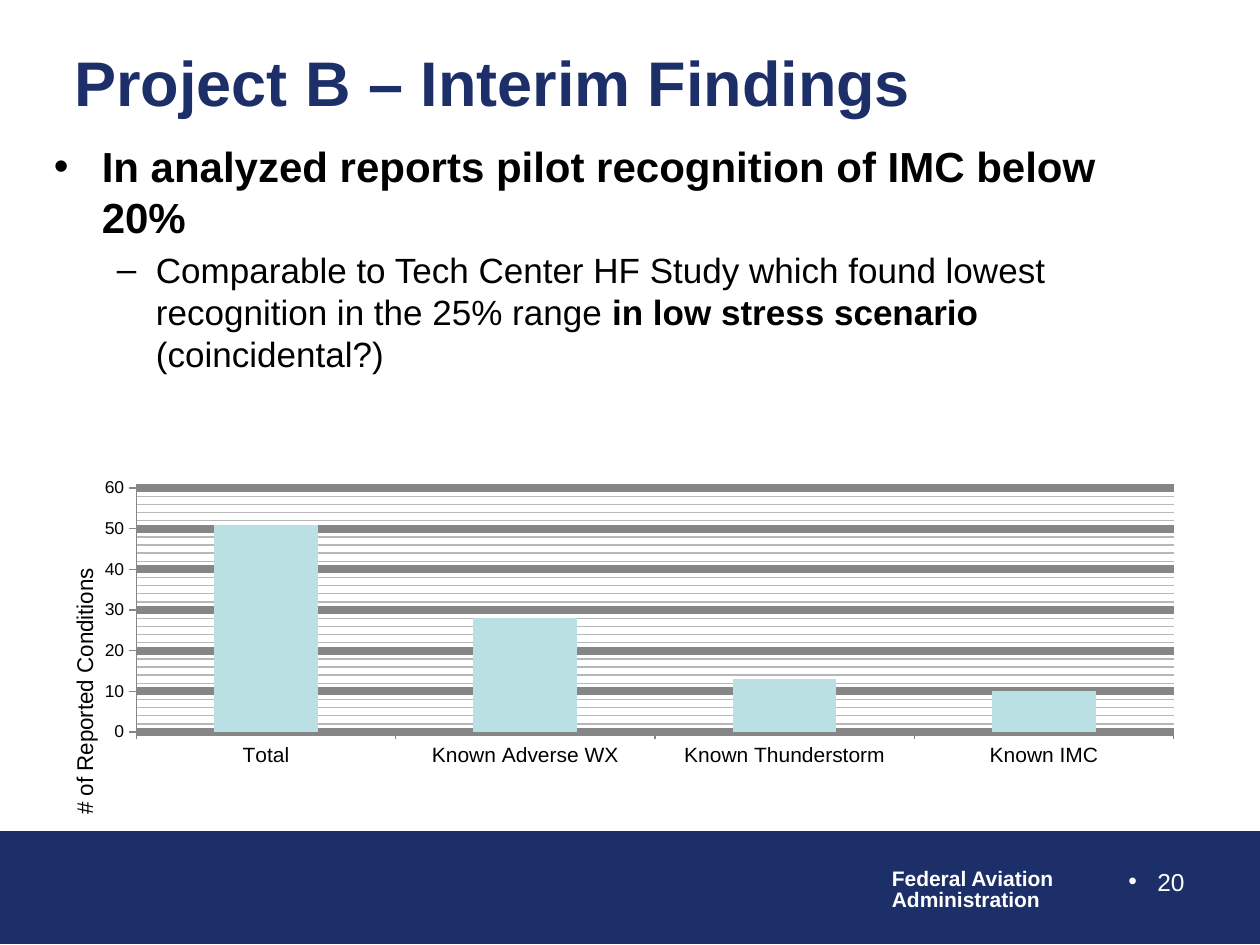
"""Build the Project B interim findings slide with a column chart."""
from lxml.etree import SubElement
from pptx import Presentation
from pptx.chart.data import CategoryChartData
from pptx.dml.color import RGBColor
from pptx.enum.chart import XL_CHART_TYPE, XL_TICK_MARK
from pptx.enum.shapes import MSO_SHAPE
from pptx.enum.text import MSO_ANCHOR, PP_ALIGN
from pptx.oxml.ns import qn
from pptx.util import Inches, Pt

NAVY, WHITE, BLACK = "1D2F68", "FFFFFF", "000000"


def style(font, size, color, bold=False):
    """Apply Arial with the given size, colour and weight."""
    font.name = "Arial"
    font.size = Pt(size)
    font.bold = bold
    font.color.rgb = RGBColor.from_string(color)


def set_layout(parent, position, **values):
    """Place a chart part by fractions of the chart area."""
    for old_layout in parent.findall(qn("c:layout")):
        parent.remove(old_layout)
    layout = SubElement(parent, qn("c:layout"))
    parent.insert(position, layout)
    manual = SubElement(layout, qn("c:manualLayout"))
    for name, value in values.items():
        SubElement(manual, qn(f"c:{name}")).set("val", str(value))


presentation = Presentation()
presentation.slide_width = Inches(10)
presentation.slide_height = Inches(7.5)
slide = presentation.slides.add_slide(presentation.slide_layouts[5])

footer = slide.shapes.add_shape(
    MSO_SHAPE.RECTANGLE, Inches(0), Inches(6.6), Inches(10), Inches(0.89))
footer.shadow.inherit = False
footer.fill.solid()
footer.fill.fore_color.rgb = RGBColor.from_string(NAVY)
footer.line.color.rgb = RGBColor.from_string(NAVY)
footer.line.width = Pt(0.75)

agency = slide.shapes.add_textbox(Inches(6.98), Inches(6.85), Inches(1.5), Inches(0.44))
agency.text_frame.text = "Federal Aviation\nAdministration"
for paragraph in agency.text_frame.paragraphs:
    paragraph.line_spacing = 0.85
    style(paragraph.font, 12, WHITE, True)

title = slide.shapes.title
title.left, title.top = Inches(0.49), Inches(0.31)
title.width, title.height = Inches(9.27), Inches(0.67)
title.text_frame.text = "Project B – Interim Findings"
title.text_frame.vertical_anchor = MSO_ANCHOR.MIDDLE
title.text_frame.paragraphs[0].alignment = PP_ALIGN.LEFT
style(title.text_frame.paragraphs[0].font, 36, NAVY, True)

body = slide.shapes.add_textbox(Inches(0.33), Inches(1.07), Inches(8.8), Inches(2))
number = slide.shapes.add_textbox(Inches(7.17), Inches(6.83), Inches(2.33), Inches(0.52))
finding = body.text_frame.paragraphs[0]
comparison = body.text_frame.add_paragraph()
page = number.text_frame.paragraphs[0]
page.alignment = PP_ALIGN.RIGHT
comparison.level = 1
comparison.space_before = Pt(4)

bulleted = [
    (finding, "•", 0.38, 0.38, 24, BLACK, True,
     ["In analyzed reports pilot recognition of IMC below 20%"]),
    (comparison, "–", 0.81, 0.31, 20, BLACK, None,
     ["Comparable to Tech Center HF Study which found lowest recognition in the 25% range ",
      "in low stress scenario", " (coincidental?)"]),
    (page, "•", 0.23, 0.23, 14, WHITE, False, ["20"]),
]
for paragraph, bullet, margin, hanging, size, color, bold, texts in bulleted:
    properties = paragraph._p.get_or_add_pPr()
    properties.set("marL", str(Inches(margin)))
    properties.set("indent", str(-Inches(hanging)))
    SubElement(properties, qn("a:buFont")).set("typeface", "Arial")
    SubElement(properties, qn("a:buChar")).set("char", bullet)
    style(paragraph.font, size, color, bold)
    for text in texts:
        paragraph.add_run().text = text
comparison.runs[1].font.bold = True
for text_box in (body, number):
    text_box.text_frame.word_wrap = True

chart_data = CategoryChartData()
chart_data.categories = ["Total", "Known Adverse WX", "Known Thunderstorm", "Known IMC"]
chart_data.add_series("Series 1", [51, 28, 13, 10])
chart = slide.shapes.add_chart(
    XL_CHART_TYPE.COLUMN_CLUSTERED, Inches(0.25), Inches(3.42),
    Inches(9.25), Inches(3.08), chart_data).chart
chart.has_legend = False
chart.has_title = False
style(chart.font, 10, BLACK)

plot = chart.plots[0]
plot.gap_width = 150
plot.vary_by_categories = False
fill = plot.series[0].format.fill
fill.solid()
fill.fore_color.rgb = RGBColor.from_string("BBE0E3")

value_axis, category_axis = chart.value_axis, chart.category_axis
value_axis.minimum_scale, value_axis.maximum_scale = 0, 60
value_axis.major_unit, value_axis.minor_unit = 10, 2
value_axis.has_major_gridlines = True
value_axis.has_minor_gridlines = True
for part, width in ((value_axis.major_gridlines, 4.5), (value_axis, 0.75), (category_axis, 0.75)):
    part.format.line.color.rgb = RGBColor.from_string("868686")
    part.format.line.width = Pt(width)

minor_gridlines = value_axis._element.find(qn("c:minorGridlines"))
minor_line = SubElement(SubElement(minor_gridlines, qn("c:spPr")), qn("a:ln"))
minor_line.set("w", str(Pt(0.75)))
minor_fill = SubElement(minor_line, qn("a:solidFill"))
SubElement(minor_fill, qn("a:srgbClr")).set("val", "B7B7B7")

for axis, size in ((value_axis, 10), (category_axis, 12)):
    axis.major_tick_mark = XL_TICK_MARK.OUTSIDE
    axis.minor_tick_mark = XL_TICK_MARK.NONE
    style(axis.tick_labels.font, size, BLACK)

axis_title = value_axis.axis_title
axis_title.text_frame.text = "# of Reported Conditions"
style(axis_title.text_frame.paragraphs[0].font, 13, BLACK)
axis_title.text_frame._txBody.bodyPr.set("rot", "-5400000")
axis_title.text_frame._txBody.bodyPr.set("vert", "horz")
set_layout(axis_title._element, 1, xMode="edge", yMode="edge", x=0.03, y=0.36)
set_layout(chart._chartSpace.chart.plotArea, 0, layoutTarget="inner",
           xMode="edge", yMode="edge", x=0.09, y=0.15, w=0.89, h=0.64)

presentation.save("out.pptx")
